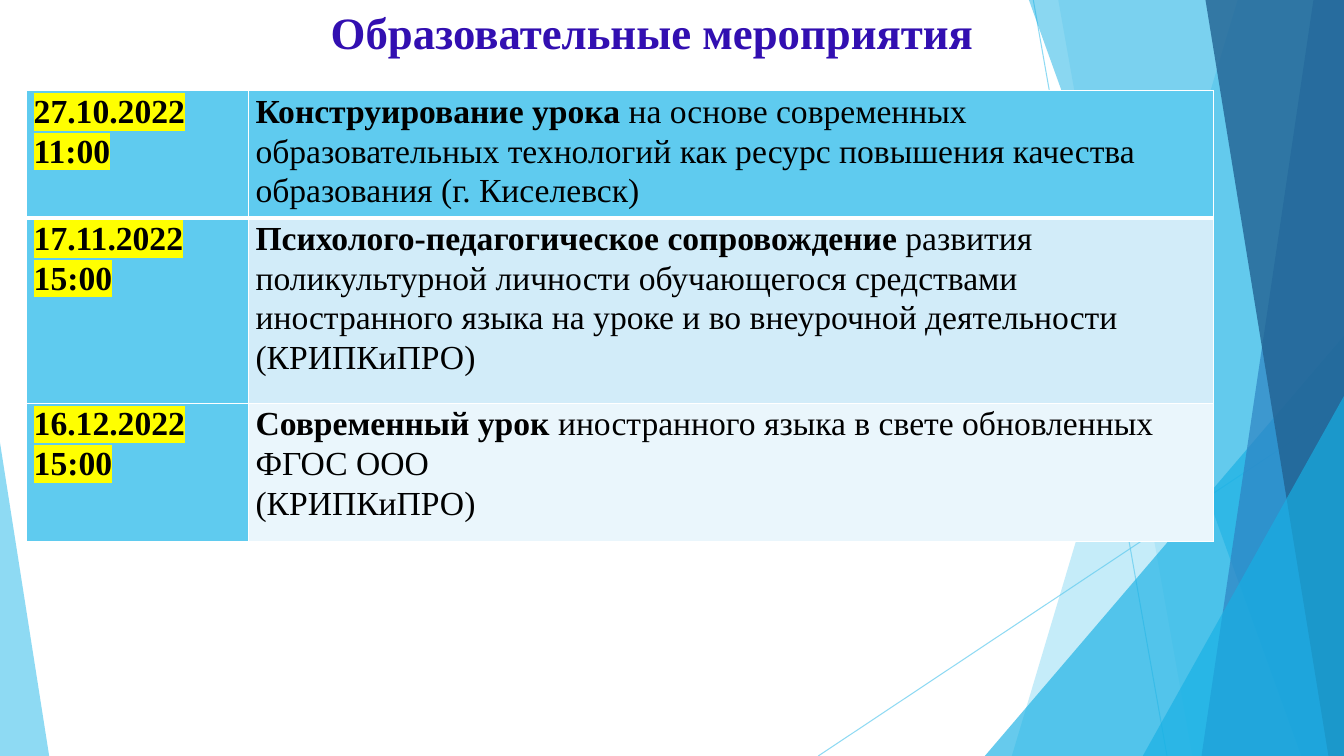
from lxml.etree import SubElement
from pptx import Presentation
from pptx.dml.color import RGBColor
from pptx.enum.shapes import MSO_CONNECTOR as Connector, MSO_SHAPE as Preset
from pptx.enum.text import MSO_ANCHOR as Anchor, PP_ALIGN as Align
from pptx.oxml import parse_xml
from pptx.oxml.ns import nsdecls, qn
from pptx.util import Cm, Pt

COLORS = {
    "sky": "5FCBEF", "cyan": "17B0E4", "blue": "2E83C3", "navy": "226292",
    "pale": "D2ECF9", "paler": "EAF6FC", "white": "FFFFFF",
    "black": "000000", "violet": "320FB1", "yellow": "FFFF00",
}
WIDTH, HEIGHT = 33.87, 19.05


def add_text(para, text, size=24, color="black", bold=False, highlight=None):
    span = para.add_run()
    span.text = text
    span.font.name = "Times New Roman"
    span.font.size = Pt(size)
    span.font.bold = bold
    span.font.color.rgb = RGBColor.from_string(COLORS[color])
    if highlight:
        span.font._element.find(qn("a:latin")).addprevious(parse_xml(
            f'<a:highlight {nsdecls("a")}><a:srgbClr val="{COLORS[highlight]}"/></a:highlight>'))


def paint(fill, shape, color, opacity):
    fill.solid()
    fill.fore_color.rgb = RGBColor.from_string(COLORS[color])
    for node in shape._element.spPr.iter(qn("a:srgbClr")):
        SubElement(node, qn("a:alpha")).set("val", str(opacity * 1000))


deck = Presentation()
deck.slide_width, deck.slide_height = Cm(WIDTH), Cm(HEIGHT)
page = deck.slides.add_slide(deck.slide_layouts[5])

for start_x, start_y, end_x in [(26.04, 0, 29.41), (WIDTH, 10.24, 20.62)]:
    ray = page.shapes.add_connector(
        Connector.STRAIGHT, Cm(start_x), Cm(start_y), Cm(end_x), Cm(HEIGHT))
    ray.line.width = Pt(0.75)
    paint(ray.line.fill, ray, "sky", 70)
    SubElement(ray._element.spPr, qn("a:effectLst"))

facets = [
    ("band", (31.19, 25.5), "sky", 36),
    ("band", (26.67, 30.05), "sky", 20),
    ("triangle", (24.82, 8.46, 9.05, 1), "cyan", 66),
    ("band", (25.93, 32.79), "cyan", 50),
    ("band", (33.1, 30.28), "blue", 70),
    ("band", (30.38, 33.48), "navy", 80),
    ("triangle", (28.8, 9.98, 5.07, 1), "cyan", 66),
    ("triangle", (0, 11.15, 1.24, 0), "sky", 70),
]
for kind, place, color, opacity in facets:
    if kind == "band":
        top_x, bottom_x = place
        outline = page.shapes.build_freeform(Cm(top_x), 0)
        outline.add_line_segments(
            [(Cm(WIDTH), 0), (Cm(WIDTH), Cm(HEIGHT)), (Cm(bottom_x), Cm(HEIGHT))])
        facet = outline.convert_to_shape()
    else:
        left, top, width, apex = place
        facet = page.shapes.add_shape(
            Preset.ISOSCELES_TRIANGLE, Cm(left), Cm(top), Cm(width), Cm(HEIGHT - top))
        facet.adjustments[0] = apex
    paint(facet.fill, facet, color, opacity)
    facet.line.fill.background()
    facet.shadow.inherit = False

title = page.shapes.title
title.left, title.top, title.width, title.height = Cm(1.32), Cm(0), Cm(30.23), Cm(1.6)
title.text_frame.word_wrap = True
title.text_frame.vertical_anchor = Anchor.TOP
heading = title.text_frame.paragraphs[0]
heading.alignment = Align.CENTER
add_text(heading, "Образовательные мероприятия", size=32, color="violet", bold=True)

events = [
    ("27.10.2022", "11:00", "Конструирование урока ",
     ["на основе современных образовательных технологий как ресурс "
      "повышения качества образования (г. Киселевск)"], "sky", 3.2),
    ("17.11.2022", "15:00", "Психолого-педагогическое сопровождение ",
     ["развития поликультурной личности обучающегося средствами иностранного языка "
      "на уроке и во внеурочной деятельности", "(КРИПКиПРО)"], "pale", 4.67),
    ("16.12.2022", "15:00", "Современный урок ",
     ["иностранного языка в свете обновленных ФГОС ООО", "(КРИПКиПРО)"], "paler", 3.48),
]
frame = page.shapes.add_table(len(events), 2, Cm(0.67), Cm(2.29), Cm(29.92), Cm(11.35))
table = frame.table
table.first_row = table.horz_banding = False
table.columns[0].width, table.columns[1].width = Cm(5.59), Cm(24.33)

for row, (date, time, topic, details, shade, height) in enumerate(events):
    table.rows[row].height = Cm(height)
    when = [[(date, True, "yellow")], [(time, True, "yellow")]]
    what = [[(detail, False, None)] for detail in details]
    what[0].insert(0, (topic, True, None))
    for column, (lines, fill) in enumerate([(when, "sky"), (what, shade)]):
        cell = table.cell(row, column)
        cell.margin_left = cell.margin_right = Cm(0.18)
        cell.margin_top = cell.margin_bottom = 0
        cell.fill.solid()
        cell.fill.fore_color.rgb = RGBColor.from_string(COLORS[fill])
        for index, pieces in enumerate(lines):
            para = cell.text_frame.paragraphs[0] if index == 0 else cell.text_frame.add_paragraph()
            para.line_spacing = 1.07
            for text, bold, highlight in pieces:
                add_text(para, text, bold=bold, highlight=highlight)
        for position, side in enumerate(["lnL", "lnR", "lnT", "lnB"]):
            heavy = (row, side) in [(0, "lnB"), (1, "lnT")]
            cell._tc.tcPr.insert(position, parse_xml(
                f'<a:{side} {nsdecls("a")} w="{Pt(3 if heavy else 1)}"><a:solidFill>'
                f'<a:srgbClr val="{COLORS["white"]}"/></a:solidFill></a:{side}>'))

deck.save("out.pptx")
